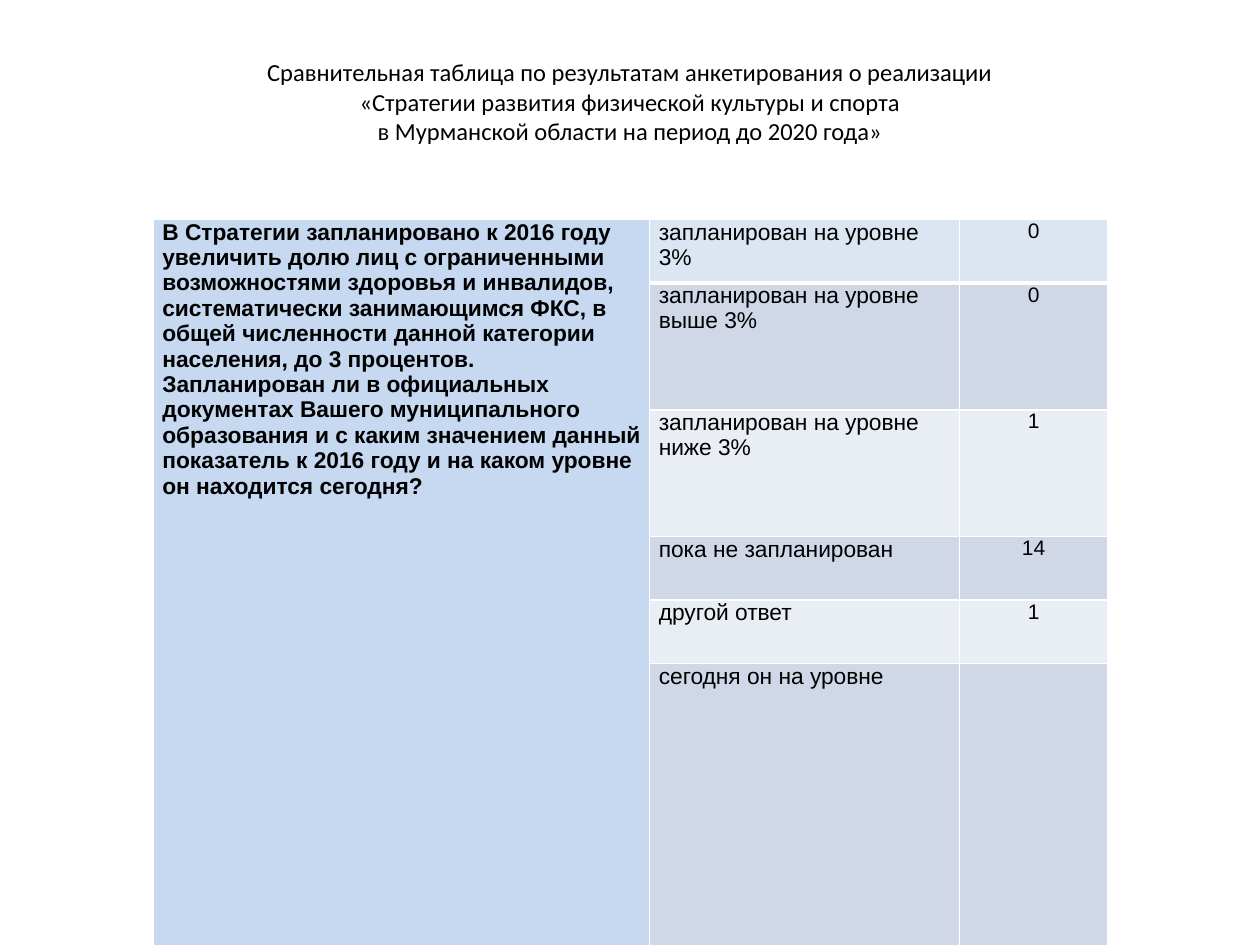
from lxml.etree import SubElement
from pptx import Presentation
from pptx.dml.color import RGBColor
from pptx.enum.text import MSO_ANCHOR, PP_ALIGN
from pptx.oxml.ns import qn
from pptx.util import Pt

TITLE = (
    "Сравнительная таблица по результатам анкетирования о реализации\v"
    "«Стратегии развития физической культуры и спорта\v"
    "в Мурманской области на период до 2020 года»"
)
QUESTION = (
    "В Стратегии запланировано к 2016 году увеличить долю лиц с ограниченными "
    "возможностями здоровья и инвалидов, систематически занимающимся ФКС, в общей "
    "численности данной категории населения, до 3 процентов. Запланирован ли в "
    "официальных документах Вашего муниципального образования и с каким значением "
    "данный показатель к 2016 году и на каком уровне он находится сегодня?"
)
LINE_HEIGHT = 36.25
# answer, count, row height in units of LINE_HEIGHT
ANSWERS = [
    ("запланирован на уровне 3%", "0", 1),
    ("запланирован на уровне выше 3%", "0", 2),
    ("запланирован на уровне ниже 3%", "1", 2),
    ("пока не запланирован", "14", 1),
    ("другой ответ", "1", 1),
    ("сегодня он на уровне", "", 3),
]
COLUMN_WIDTHS = [283.7, 177.1, 85]
QUESTION_FILL, FIRST_FILL = "C6D9F1", "DCE6F2"
BAND_FILLS = ["E9EDF4", "D0D8E8"]


def color(value):
    return RGBColor.from_string(value)


def style_paragraph(paragraph, font_name, size, align, bold=False):
    paragraph.alignment = align
    font = paragraph.font
    font.name, font.size, font.bold = font_name, Pt(size), bold
    font.color.rgb = color("000000")


def add_title(slide):
    box = slide.shapes.add_textbox(Pt(36), Pt(21.6), Pt(648), Pt(90))
    frame = box.text_frame
    frame.word_wrap = True
    frame.vertical_anchor = MSO_ANCHOR.MIDDLE
    frame.margin_bottom = Pt(20.6)
    paragraph = frame.paragraphs[0]
    paragraph.text = TITLE
    style_paragraph(paragraph, "Calibri", 14, PP_ALIGN.CENTER)


def add_borders(cell, top, bottom):
    properties = cell._tc.get_or_add_tcPr()
    for tag, width in (("lnL", 1), ("lnR", 1), ("lnT", top), ("lnB", bottom)):
        line = SubElement(properties, qn(f"a:{tag}"), w=str(Pt(width)))
        fill = SubElement(line, qn("a:solidFill"))
        SubElement(fill, qn("a:srgbClr"), val="FFFFFF")


def fill_cell(cell, text, fill, size=13, align=PP_ALIGN.LEFT, bold=False):
    cell.margin_left = cell.margin_right = Pt(5.4)
    cell.margin_top = cell.margin_bottom = 0
    cell.fill.solid()
    cell.fill.fore_color.rgb = color(fill)
    cell.text = text
    style_paragraph(cell.text_frame.paragraphs[0], "Arial", size, align, bold)


def add_answer_table(slide):
    heights = [units * LINE_HEIGHT for _, _, units in ANSWERS]
    table = slide.shapes.add_table(
        len(ANSWERS), len(COLUMN_WIDTHS), Pt(87.4), Pt(125.5),
        Pt(sum(COLUMN_WIDTHS)), Pt(sum(heights)),
    ).table
    for column, width in zip(table.columns, COLUMN_WIDTHS):
        column.width = Pt(width)
    for index, (answer, count, _) in enumerate(ANSWERS):
        row = table.rows[index]
        row.height = Pt(heights[index])
        for cell in row.cells:
            add_borders(cell, top=3 if index == 1 else 1, bottom=3 if index == 0 else 1)
        fill = BAND_FILLS[index % 2] if index else FIRST_FILL
        fill_cell(table.cell(index, 1), answer, fill)
        fill_cell(table.cell(index, 2), count, fill, 12, PP_ALIGN.CENTER)
    question = table.cell(0, 0)
    question.merge(table.cell(len(ANSWERS) - 1, 0))
    fill_cell(question, QUESTION, QUESTION_FILL, bold=True)


def main():
    presentation = Presentation()
    presentation.slide_width, presentation.slide_height = Pt(720), Pt(540)
    slide = presentation.slides.add_slide(presentation.slide_layouts[6])
    add_title(slide)
    add_answer_table(slide)
    presentation.save("out.pptx")


if __name__ == "__main__":
    main()
